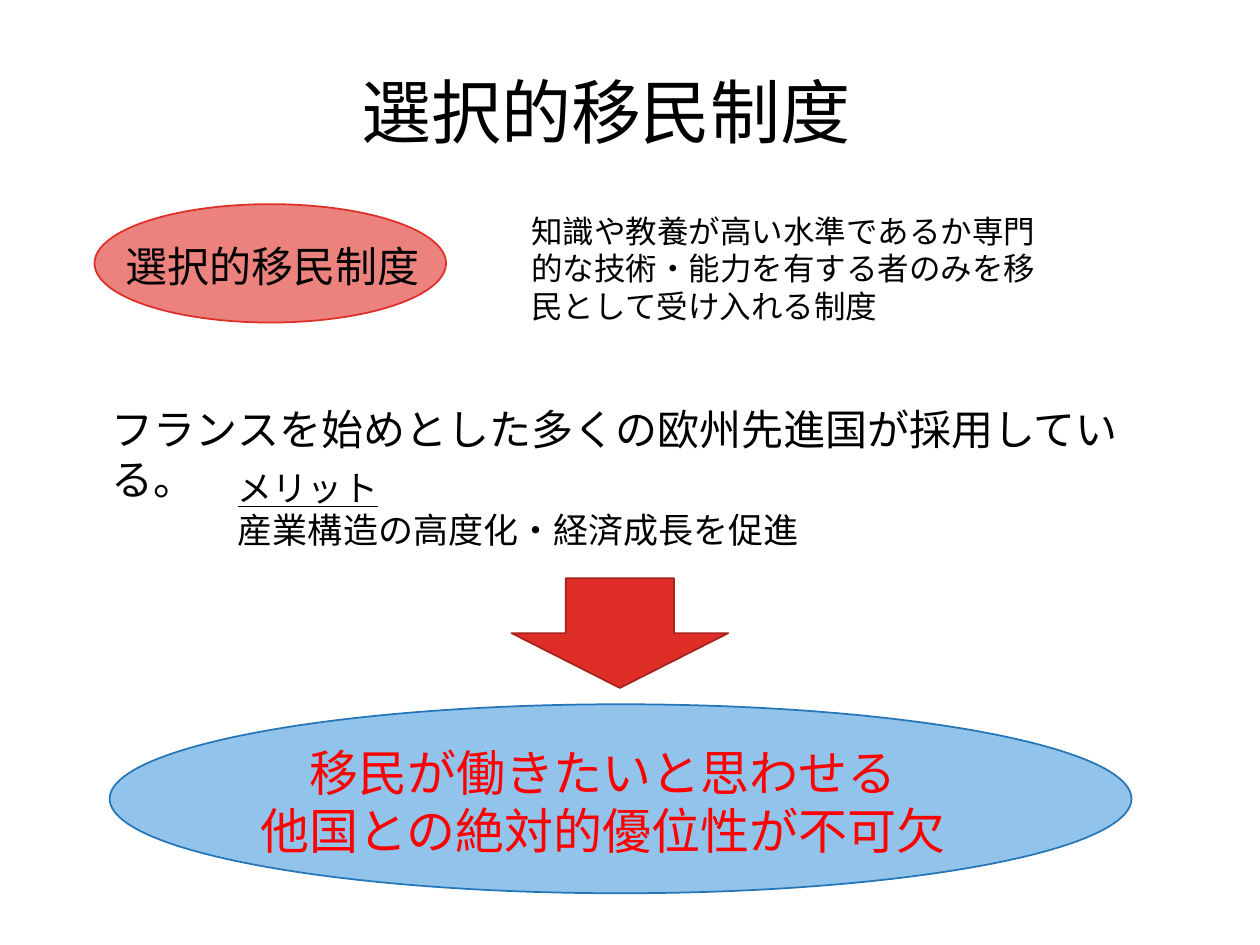
from pptx import Presentation, util as u
from pptx.dml.color import RGBColor
from pptx.enum import shapes, text

FONT = "TeX Gyre Adventor"
BLACK, RED = "000000", "FF0000"
WIDTH, HEIGHT = 10, 7.5

# Content: boxes are left, top, width, height in percent of the slide
TITLE = ("選択的移民制度", (18.5, 3.87, 59.2, 16.67))

ELLIPSE_GROUPS = [
    {"ellipse": (7.5, 21.6, 27.9, 12.53), "fill": "EC827E", "line": "DF2E28",
     "lines": ["選択的移民制度"], "label": (7.9, 24.8, 27.5, 6.67),
     "size": 24, "color": BLACK},
    {"ellipse": (8.7, 74.53, 81.1, 20), "fill": "92C3EA", "line": "2476B9",
     "lines": ["移民が働きたいと思わせる", "他国との絶対的優位性が不可欠"],
     "label": (17.1, 77.87, 61.5, 13.87), "size": 28, "color": RED},
]

NOTES = [
    {"lines": ["知識や教養が高い水準であるか専門的な技術・能力を有する者のみを移民として受け入れる制度"],
     "box": (41.2, 21.73, 43.3, 13.47), "size": 18},
    {"lines": ["フランスを始めとした多くの欧州先進国が採用している。"],
     "box": (7.9, 42, 82.7, 6.67), "size": 24},
    {"lines": ["メリット", "産業構造の高度化・経済成長を促進"],
     "box": (17.9, 48.67, 47.4, 10.27), "size": 20, "underlined": 1},
]

ARROW = {"box": (40.6, 61.2, 17.2, 11.6), "fill": "DF2E28", "line": "A5221E"}


def rgb(value):
    return RGBColor.from_string(value)


def place(box):
    left, top, width, height = box
    return (u.Inches(left * WIDTH / 100), u.Inches(top * HEIGHT / 100),
            u.Inches(width * WIDTH / 100), u.Inches(height * HEIGHT / 100))


def write(frame, lines, size, color=BLACK, align=text.PP_ALIGN.LEFT,
          anchor=text.MSO_ANCHOR.TOP, spacing=None, underlined=0):
    """Fill a text frame; the first `underlined` lines are underlined."""
    frame.word_wrap = True
    frame.vertical_anchor = anchor
    for index, line in enumerate(lines):
        paragraph = frame.paragraphs[0] if index == 0 else frame.add_paragraph()
        paragraph.alignment = align
        paragraph.line_spacing = spacing
        run = paragraph.add_run()
        run.text = line
        run.font.name = FONT
        run.font.size = u.Pt(size)
        run.font.color.rgb = rgb(color)
        if index < underlined:
            run.font.underline = True


def add_figure(parent, kind, box, fill, line):
    shape = parent.add_shape(kind, *place(box))
    shape.shadow.inherit = False
    shape.fill.solid()
    shape.fill.fore_color.rgb = rgb(fill)
    shape.line.color.rgb = rgb(line)
    shape.line.width = u.Pt(1)


def add_text(parent, box, lines, size, **style):
    textbox = parent.add_textbox(*place(box))
    write(textbox.text_frame, lines, size, **style)
    textbox.text_frame.auto_size = text.MSO_AUTO_SIZE.SHAPE_TO_FIT_TEXT


def main():
    presentation = Presentation()
    presentation.slide_width = u.Inches(WIDTH)
    presentation.slide_height = u.Inches(HEIGHT)
    slide = presentation.slides.add_slide(presentation.slide_layouts[5])

    # Title
    title = slide.shapes.title
    title.left, title.top, title.width, title.height = place(TITLE[1])
    write(title.text_frame, [TITLE[0]], 40, align=text.PP_ALIGN.CENTER,
          anchor=text.MSO_ANCHOR.MIDDLE, spacing=0.9)

    # Labelled ellipses
    for item in ELLIPSE_GROUPS:
        group = slide.shapes.add_group_shape().shapes
        add_figure(group, shapes.MSO_SHAPE.OVAL, item["ellipse"],
                   item["fill"], item["line"])
        add_text(group, item["label"], item["lines"], item["size"],
                 color=item["color"], align=text.PP_ALIGN.CENTER)

    # Explanations
    for note in NOTES:
        add_text(slide.shapes, **note)

    # Arrow to the conclusion
    add_figure(slide.shapes, shapes.MSO_SHAPE.DOWN_ARROW, **ARROW)

    presentation.save("out.pptx")


if __name__ == "__main__":
    main()
